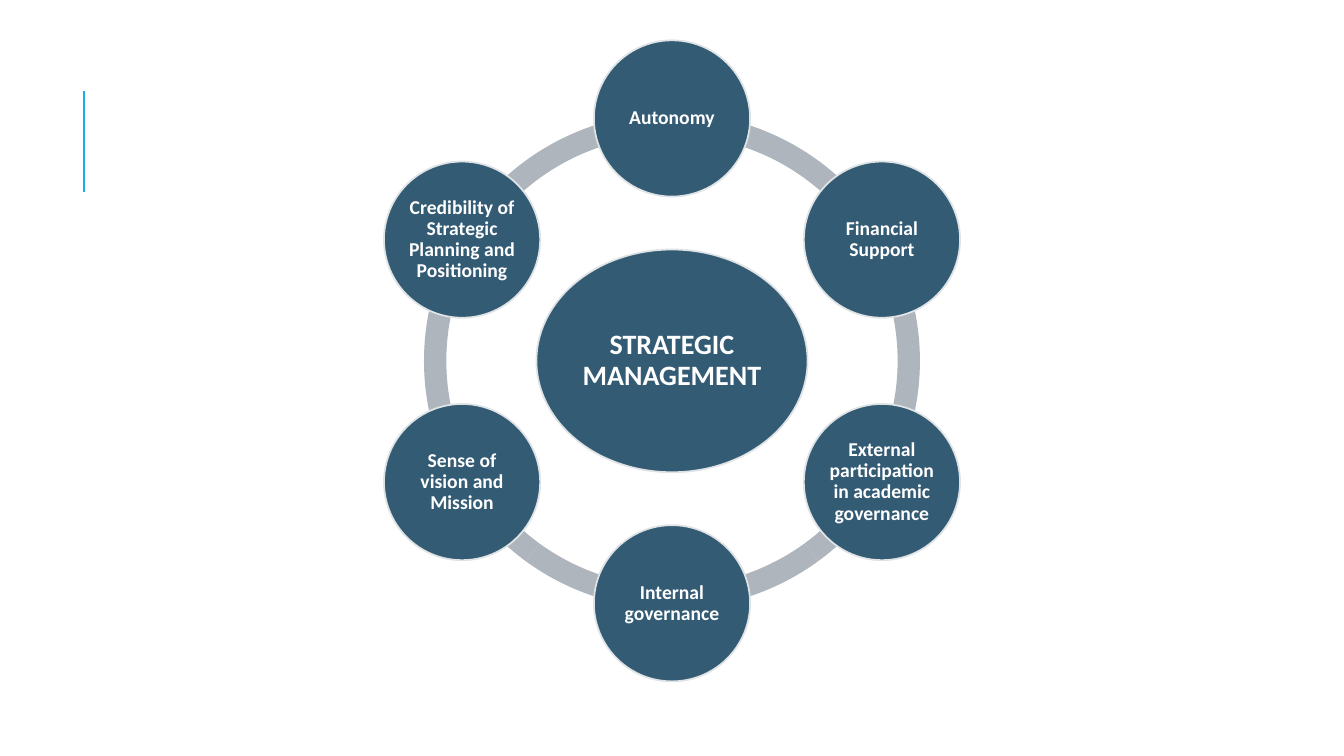
import dataclasses
import itertools
import math

import pptx
import pptx.dml.color
import pptx.enum.shapes
import pptx.enum.text
import pptx.oxml
import pptx.oxml.ns
import pptx.util

# Grid: square cells, 160 columns by 90 rows
COLUMNS, ROWS = 160, 90
CELL = pptx.util.Inches(7.5 / ROWS)
CENTRE_COLUMN, CENTRE_ROW = 80, 42.96

COLORS = {
    "accent": "1CADE4",
    "ring": "AEB5BC",
    "disc": "335B74",
    "outline": "DFE3E5",
    "text": "FFFFFF",
}
FONT = "Calibri"

RING_SIZE = 59.04
RING_THICKNESS = 0.045
ARC_ENDS = [162, 126, 90, 54, 18, 198, 162]
ORBIT_RADIUS = 28.86
FACTOR_SIZE = 18.6
FACTORS = [
    "Autonomy",
    "Financial Support",
    "External participation in academic governance",
    "Internal governance",
    "Sense of vision and Mission",
    "Credibility of Strategic Planning and Positioning",
]


@dataclasses.dataclass
class Disc:
    text: str
    column: float
    row: float
    width: float
    height: float
    size: float
    inset: float


def cells(count: float) -> int:
    return round(count * CELL)


def color(name: str) -> pptx.dml.color.RGBColor:
    return pptx.dml.color.RGBColor.from_string(COLORS[name])


def add_centred(page, kind, column: float, row: float, width: float, height: float, fill: str):
    shape = page.shapes.add_shape(
        kind, cells(column - width / 2), cells(row - height / 2), cells(width), cells(height)
    )
    shape.shadow.inherit = False
    shape.fill.solid()
    shape.fill.fore_color.rgb = color(fill)
    return shape


def write(shape, text: str, *, size: float, inset: float, bold: bool = True) -> None:
    frame = shape.text_frame
    frame.word_wrap = True
    frame.vertical_anchor = pptx.enum.text.MSO_ANCHOR.MIDDLE
    frame.margin_left = frame.margin_right = pptx.util.Inches(inset)
    frame.margin_top = frame.margin_bottom = pptx.util.Inches(inset)
    para = frame.paragraphs[0]
    para.alignment = pptx.enum.text.PP_ALIGN.CENTER
    para.line_spacing = 0.9
    span = para.add_run()
    span.text = text
    span.font.name = FONT
    span.font.size = pptx.util.Pt(size)
    span.font.bold = bold
    span.font.color.rgb = color("text")


def draw_accent(page) -> None:
    line = page.shapes.add_connector(
        pptx.enum.shapes.MSO_CONNECTOR.STRAIGHT, cells(10), cells(22.8), cells(10), cells(10.8)
    )
    line.line.color.rgb = color("accent")
    line.line.width = pptx.util.Pt(1.5)
    properties = line._element.spPr
    properties.append(pptx.oxml.parse_xml(f"<a:effectLst {pptx.oxml.ns.nsdecls('a')}/>"))


def draw_arc(page, start: float, end: float) -> None:
    arc = add_centred(
        page, pptx.enum.shapes.MSO_SHAPE.BLOCK_ARC,
        CENTRE_COLUMN, CENTRE_ROW, RING_SIZE, RING_SIZE, "ring",
    )
    arc.line.fill.background()
    # Angles are stored in 60000ths of a degree, adjustments in 100000ths
    arc.adjustments[0] = start * 0.6
    arc.adjustments[1] = end * 0.6
    arc.adjustments[2] = RING_THICKNESS


def draw_disc(page, disc: Disc) -> None:
    shape = add_centred(
        page, pptx.enum.shapes.MSO_SHAPE.OVAL,
        disc.column, disc.row, disc.width, disc.height, "disc",
    )
    shape.line.color.rgb = color("outline")
    shape.line.width = pptx.util.Pt(1.25)
    write(shape, disc.text, size=disc.size, inset=disc.inset)


def factor_disc(index: int, text: str) -> Disc:
    angle = math.tau * index / len(FACTORS)
    return Disc(
        text,
        CENTRE_COLUMN + ORBIT_RADIUS * math.sin(angle),
        CENTRE_ROW - ORBIT_RADIUS * math.cos(angle),
        FACTOR_SIZE, FACTOR_SIZE, size=14, inset=0.02,
    )


def main() -> None:
    deck = pptx.Presentation()
    deck.slide_width, deck.slide_height = cells(COLUMNS), cells(ROWS)
    page = deck.slides.add_slide(deck.slide_layouts[6])

    draw_accent(page)

    # Ring, one arc between each pair of neighbouring factors
    for end, start in itertools.pairwise(ARC_ENDS):
        draw_arc(page, start, end)

    # Hub and the factors around it
    hub = Disc("STRATEGIC MANAGEMENT", CENTRE_COLUMN, CENTRE_ROW, 32.28, 26.52, size=20, inset=0.03)
    factors = [factor_disc(index, text) for index, text in enumerate(FACTORS)]
    for disc in [hub, *factors]:
        draw_disc(page, disc)

    deck.save("out.pptx")


if __name__ == "__main__":
    main()
